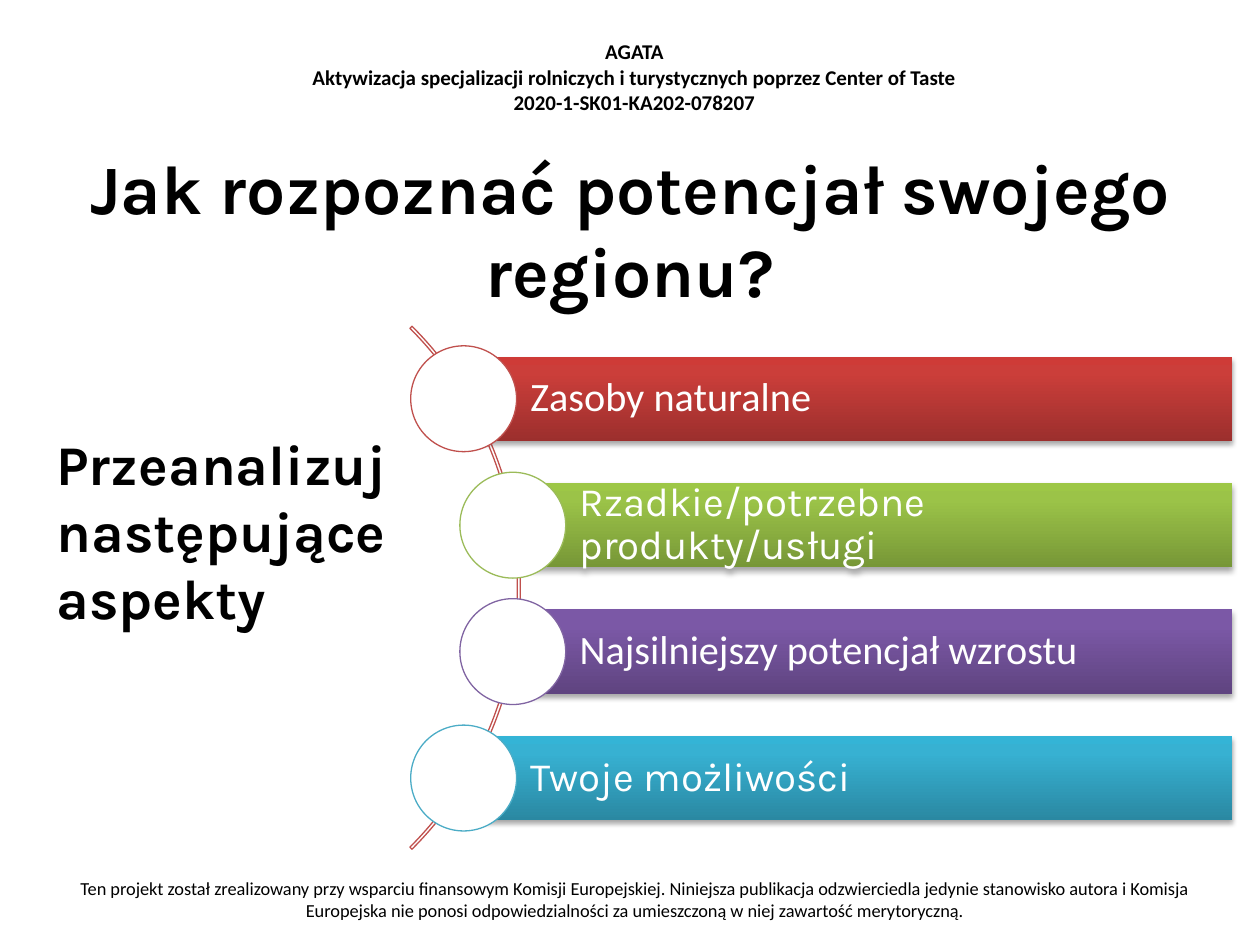
from copy import deepcopy

from lxml.etree import SubElement
from pptx import Presentation
from pptx.dml.color import RGBColor
from pptx.enum.shapes import MSO_SHAPE
from pptx.enum.text import MSO_ANCHOR, PP_ALIGN
from pptx.oxml.ns import qn
from pptx.util import Inches, Pt

# Label, font, left edge of bar, circle line, gradient from bottom to top
ROWS = [
    ("Zasoby naturalne", "Calibri", 3.68, "C0504D",
     ("9C2F2D", "CB3E3A", "CE3B37")),
    ("Rzadkie/potrzebne produkty/usługi", "Karla", 4.07, "9BBB59",
     ("779737", "9BC348", "9DC746")),
    ("Najsilniejszy potencjał wzrostu", "Calibri", 4.07, "8064A2",
     ("5F4480", "7B58A6", "7C57A8")),
    ("Twoje możliwości", "Karla", 3.68, "4BACC6",
     ("2A88A2", "37B1D2", "34B4D6")),
]
RIGHT = 9.78
MID = 3.165
STEP = 3.01 / 3
BAR = 0.67
DISC = 0.84

HEAD = [
    "AGATA",
    "Aktywizacja specjalizacji rolniczych i turystycznych poprzez Center of Taste",
    "2020-1-SK01-KA202-078207",
]
FOOT = ("Ten projekt został zrealizowany przy wsparciu finansowym Komisji "
        "Europejskiej. Niniejsza publikacja odzwierciedla jedynie stanowisko "
        "autora i Komisja Europejska nie ponosi odpowiedzialności za "
        "umieszczoną w niej zawartość merytoryczną.")


def color(code):
    return RGBColor.from_string(code)


def style(para, face, size, code, bold=False, align=PP_ALIGN.LEFT):
    para.alignment = align
    font = para.font
    font.name, font.size, font.bold = face, Pt(size), bold
    font.color.rgb = color(code)


def add_text(slide, box, lines, face, size, bold=False,
             align=PP_ALIGN.CENTER, anchor=MSO_ANCHOR.TOP):
    frame = slide.shapes.add_textbox(*map(Inches, box)).text_frame
    frame.word_wrap = True
    frame.vertical_anchor = anchor
    frame.text = "\n".join(lines)
    for para in frame.paragraphs:
        style(para, face, size, "000000", bold, align)


def add_shape(slide, kind, box, line=None):
    shape = slide.shapes.add_shape(kind, *map(Inches, box))
    shape.shadow.inherit = False
    if line:
        shape.line.color.rgb = color(line)
        shape.line.width = Pt(0.75)
    else:
        shape.line.fill.background()
    return shape


def add_shade(shape, codes):
    fill = shape.fill
    fill.gradient()
    fill.gradient_angle = 90
    stops = shape._element.spPr.find(".//" + qn("a:gsLst"))
    stops.append(deepcopy(stops[-1]))
    for stop, place, code in zip(fill.gradient_stops, (0, 0.8, 1), codes):
        stop.position = place
        stop.color.rgb = color(code)


def add_shadow(shape):
    effects = shape._element.spPr.find(qn("a:effectLst"))
    outer = SubElement(effects, qn("a:outerShdw"), blurRad=str(Pt(3.1)),
                       dist=str(Pt(1.8)), dir="5400000", rotWithShape="0")
    black = SubElement(outer, qn("a:srgbClr"), val="000000")
    SubElement(black, qn("a:alpha"), val="35000")


def add_bar(slide, label, face, left, mid, codes):
    box = (left, mid - BAR / 2, RIGHT - left, BAR)
    bar = add_shape(slide, MSO_SHAPE.RECTANGLE, box)
    add_shade(bar, codes)
    add_shadow(bar)
    frame = bar.text_frame
    frame.word_wrap = True
    frame.vertical_anchor = MSO_ANCHOR.MIDDLE
    frame.margin_left = Inches(0.53)
    frame.margin_top = frame.margin_right = frame.margin_bottom = Inches(0.06)
    frame.text = label
    para = frame.paragraphs[0]
    para.line_spacing = 0.9
    style(para, face, 23, "FFFFFF")


def add_disc(slide, center, mid, line):
    box = (center - DISC / 2, mid - DISC / 2, DISC, DISC)
    disc = add_shape(slide, MSO_SHAPE.OVAL, box, line)
    disc.fill.solid()
    disc.fill.fore_color.rgb = color("FFFFFF")


def add_arc(slide):
    arc = add_shape(slide, MSO_SHAPE.BLOCK_ARC, (-1.74, 1.73, 5.87, 5.87), "C0504D")
    arc.fill.background()
    for index, value in enumerate((189, 27, 0.004)):
        arc.adjustments[index] = value


def main():
    deck = Presentation()
    deck.slide_width, deck.slide_height = Inches(10), Inches(7.5)
    slide = deck.slides.add_slide(deck.slide_layouts[6])

    # Project header and funding note
    add_text(slide, (2.08, 0.26, 5.91, 0.71), HEAD, "Calibri", 12, bold=True)
    add_text(slide, (0.54, 6.91, 9, 0.47), [FOOT], "Calibri", 10.5)

    # Title and side text
    add_text(slide, (0.5, 1.12, 9, 1.38), ["Jak rozpoznać potencjał swojego regionu?"],
             "Karla", 39.6, bold=True, anchor=MSO_ANCHOR.MIDDLE)
    add_text(slide, (0.35, 3.36, 2.83, 1.94), ["Przeanalizuj następujące aspekty"],
             "Karla", 32, bold=True, align=PP_ALIGN.LEFT)

    # Curved list of aspects
    add_arc(slide)
    for index, (label, face, left, line, codes) in enumerate(ROWS):
        mid = MID + index * STEP
        add_bar(slide, label, face, left, mid, codes)
        add_disc(slide, left, mid, line)

    deck.save("out.pptx")


if __name__ == "__main__":
    main()
